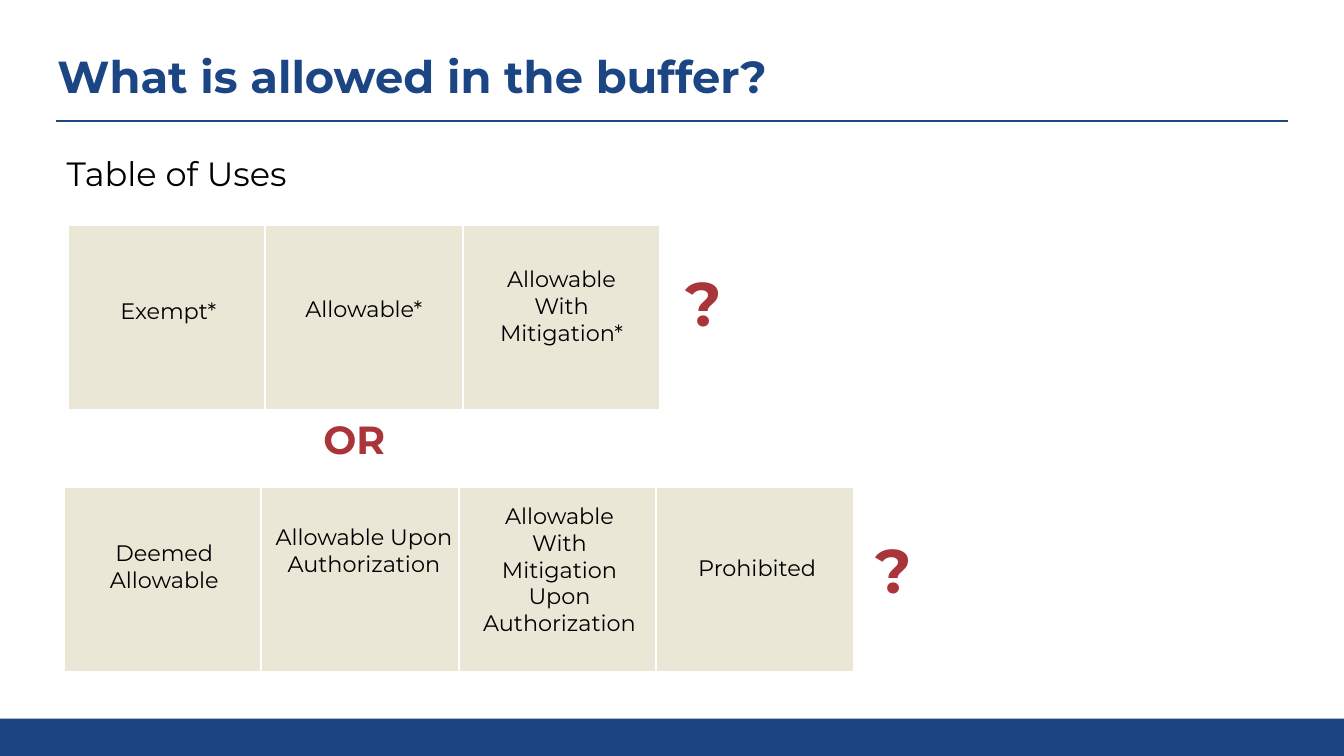
from dataclasses import dataclass

from lxml.etree import SubElement
from pptx import Presentation
from pptx.dml.color import RGBColor
from pptx.enum.shapes import MSO_CONNECTOR as Connector, MSO_SHAPE as Shape
from pptx.enum.text import MSO_ANCHOR as Anchor, MSO_AUTO_SIZE as AutoSize, PP_ALIGN as Align
from pptx.oxml.ns import qn
from pptx.slide import Slide
from pptx.text.text import TextFrame
from pptx.util import Inches, Pt

BLUE = RGBColor(0x1C, 0x45, 0x84)
SAND = RGBColor(0xEB, 0xE7, 0xD7)
RED = RGBColor(0xA9, 0x34, 0x3A)
BLACK = RGBColor(0, 0, 0)
WHITE = RGBColor(0xFF, 0xFF, 0xFF)
TILE_WIDTH, TILE_HEIGHT = 1.96, 1.84


@dataclass
class TextStyle:
    size: int
    color: RGBColor
    bold: bool = False
    align: Align = Align.LEFT


@dataclass
class Label:
    text: str
    left: float
    top: float
    width: float
    height: float
    style: TextStyle


@dataclass
class TileRow:
    left: float
    top: float
    count: int


TITLE = TextStyle(32, BLUE, True)
SUBTITLE = TextStyle(24, BLACK)
USE = TextStyle(16, BLACK, align=Align.CENTER)
CHOICE = TextStyle(28, RED, True)
QUESTION = TextStyle(44, RED, True)

TILE_ROWS = [TileRow(0.67, 2.23, 3), TileRow(0.63, 4.83, 4)]

HEADING = Label("What is allowed in the buffer?", 0.47, 0.48, 8.89, 0.61, TITLE)
TABLE_NAME = Label("Table of Uses", 0.56, 1.47, 11.5, 5.2, SUBTITLE)

LABELS = [
    Label("OR", 3.11, 4.07, 1.52, 0.57, CHOICE),
    Label("?", 6.7, 2.58, 0.58, 0.84, QUESTION),
    Label("Exempt*", 0.69, 2.9, TILE_WIDTH, 0.64, USE),
    Label("Allowable*", 2.63, 2.88, TILE_WIDTH, 0.64, USE),
    Label("Allowable\nWith\nMitigation*", 4.59, 2.58, TILE_WIDTH, 1.18, USE),
    Label("Deemed Allowable", 0.65, 5.3, TILE_WIDTH, 0.94, USE),
    Label("Allowable Upon Authorization", 2.63, 5.14, TILE_WIDTH, 1.21, USE),
    Label("Allowable\nWith\nMitigation Upon Authorization", 4.57, 4.93, TILE_WIDTH, 1.75, USE),
    Label("Prohibited", 6.53, 5.45, TILE_WIDTH, 0.64, USE),
    Label("?", 8.58, 5.23, 0.58, 0.84, QUESTION),
]


def write_text(frame: TextFrame, text: str, style: TextStyle) -> None:
    frame.word_wrap = True
    frame.text = text
    formats = {"name": "Montserrat", "size": Pt(style.size), "bold": style.bold}
    for para in frame.paragraphs:
        para.alignment = style.align
        for span in para.runs:
            for name, value in formats.items():
                setattr(span.font, name, value)
            span.font.color.rgb = style.color


def fill_placeholder(holder, label: Label, anchor: Anchor, formats: dict) -> None:
    for name in ("left", "top", "width", "height"):
        setattr(holder, name, Inches(getattr(label, name)))
    frame = holder.text_frame
    write_text(frame, label.text, label.style)
    frame.auto_size = AutoSize.NONE
    frame.vertical_anchor = anchor
    para = frame.paragraphs[0]
    for name, value in formats.items():
        setattr(para, name, value)


def add_label(page: Slide, label: Label) -> None:
    box = page.shapes.add_textbox(
        Inches(label.left), Inches(label.top), Inches(label.width), Inches(label.height))
    write_text(box.text_frame, label.text, label.style)
    box.text_frame.auto_size = AutoSize.SHAPE_TO_FIT_TEXT


def add_block(page: Slide, left: float, top: float, width: float, height: float,
              fill: RGBColor, outline: RGBColor | None = None) -> None:
    block = page.shapes.add_shape(
        Shape.RECTANGLE, Inches(left), Inches(top), Inches(width), Inches(height))
    block.shadow.inherit = False
    block.fill.solid()
    block.fill.fore_color.rgb = fill
    if outline is None:
        block.line.fill.background()
    else:
        block.line.color.rgb = outline
        block.line.width = Pt(1.5)


def add_title_rule(page: Slide) -> None:
    rule = page.shapes.add_connector(
        Connector.STRAIGHT, Inches(0.56), Inches(1.2), Inches(12.77), Inches(1.2))
    rule.line.color.rgb = BLUE
    rule.line.width = Pt(1.5)
    SubElement(rule._element.spPr, qn("a:effectLst"))


def main() -> None:
    deck = Presentation()
    deck.slide_width, deck.slide_height = Inches(13.33), Inches(7.5)
    page = deck.slides.add_slide(deck.slide_layouts[1])

    add_block(page, 0, 7.13, 13.33, 0.37, BLUE)
    add_title_rule(page)
    for row in TILE_ROWS:
        for column in range(row.count):
            add_block(page, row.left + column * TILE_WIDTH, row.top,
                      TILE_WIDTH, TILE_HEIGHT, SAND, WHITE)

    fill_placeholder(page.shapes.title, HEADING, Anchor.MIDDLE, {"line_spacing": 0.9})
    body = page.placeholders[1]
    fill_placeholder(body, TABLE_NAME, Anchor.TOP,
                     {"space_before": Pt(10), "space_after": Pt(6)})
    properties = body.text_frame.paragraphs[0]._p.get_or_add_pPr()
    properties.set("marL", "0")
    properties.set("indent", "0")
    SubElement(properties, qn("a:buNone"))

    for label in LABELS:
        add_label(page, label)
    deck.save("out.pptx")


if __name__ == "__main__":
    main()
